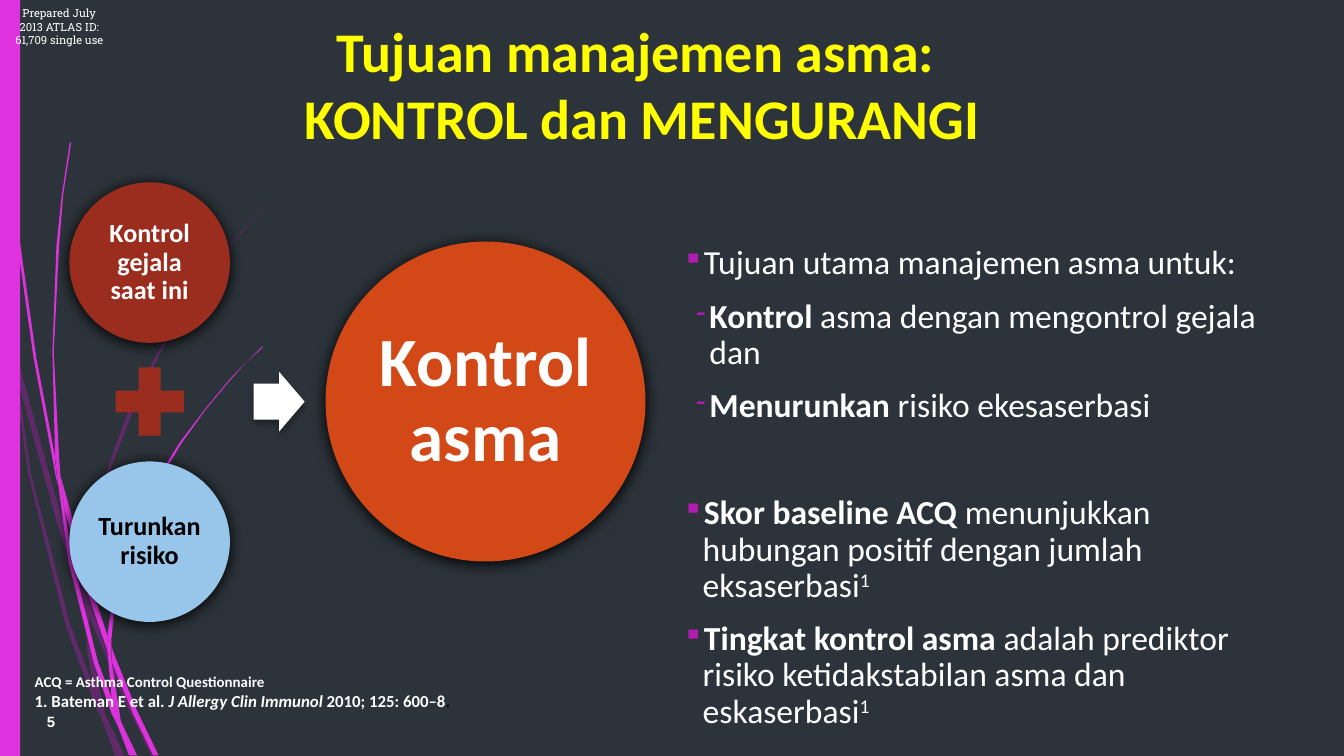
from lxml.etree import SubElement
from pptx import Presentation
from pptx.dml.color import RGBColor
from pptx.enum.shapes import MSO_SHAPE
from pptx.enum.text import MSO_ANCHOR, MSO_AUTO_SIZE, PP_ALIGN
from pptx.oxml.ns import qn
from pptx.util import Pt

COLORS = {
    "background": "2C333A", "purple": "B01CB0", "pink": "DE32DE", "red": "9B2D1F",
    "orange": "D34817", "blue": "98C6EA", "white": "FFFFFF", "black": "000000",
    "yellow": "FFFF00",
}
BODY_FONT = "Calibri"
STRAND_UNIT = Pt(0.72)

# Outlines of the decorative strands, in strand units
FAINT_STRANDS = [
    [(8, 263), (6, 241), (0, 211), (0, 224), (8, 258)],
    [(43, 391), (63, 449), (64, 440), (47, 390), (11, 259), (13, 282)],
    [(69, 455), (66, 447), (66, 458), (92, 520), (113, 563), (116, 563), (95, 519)],
    [(89, 563), (93, 563), (79, 533)],
    [(70, 512), (52, 464), (23, 352), (13, 282), (8, 263), (21, 352), (49, 466),
     (69, 520), (76, 536), (74, 530)],
    [(63, 449), (65, 485), (70, 512), (72, 519), (79, 533), (78, 530), (68, 484),
     (66, 458), (66, 456)],
    [(66, 438), (70, 392), (83, 347), (100, 303), (120, 261), (144, 222), (171, 184),
     (201, 148), (217, 131), (234, 115), (217, 131), (201, 148), (171, 183),
     (143, 221), (118, 261), (97, 302), (81, 346), (69, 391), (64, 438), (64, 440),
     (66, 447)],
    [(76, 536), (86, 563), (89, 563)],
    [(66, 456), (66, 458), (66, 447), (64, 440), (63, 449)],
    [(72, 519), (70, 512), (74, 530), (76, 536), (89, 563), (79, 533)],
]
BRIGHT_STRANDS = [
    [(5, 82), (12, 175), (25, 266), (42, 357), (43, 361), (41, 343), (41, 340),
     (27, 266), (14, 174), (6, 82), (3, 36), (3, 0), (2, 0), (3, 36)],
    [(66, 444), (80, 484), (80, 475), (80, 473), (70, 443), (45, 354), (48, 379)],
    [(85, 487), (83, 481), (83, 492), (99, 531), (114, 562), (118, 562), (102, 529)],
    [(83, 519), (73, 493), (54, 417), (48, 379), (43, 358), (51, 418), (70, 494),
     (83, 531), (88, 541), (87, 538)],
    [(45, 354), (44, 340), (40, 262), (44, 183), (47, 145), (53, 106), (52, 106),
     (46, 145), (42, 183), (39, 262), (41, 337)],
    [(100, 562), (102, 562), (91, 539)],
    [(43, 358), (48, 379), (45, 354), (41, 337), (41, 340)],
    [(83, 475), (86, 444), (94, 414), (105, 385), (119, 357), (135, 330), (153, 305),
     (173, 281), (184, 269), (196, 258), (195, 258), (184, 269), (173, 280),
     (153, 304), (134, 329), (117, 356), (103, 384), (92, 413), (84, 443), (80, 473),
     (83, 481)],
    [(88, 541), (96, 562), (98, 562)],
    [(80, 484), (83, 519), (87, 530), (91, 539), (90, 537), (83, 492), (81, 488)],
    [(80, 484), (81, 488), (83, 492), (83, 481), (80, 473), (80, 475)],
    [(87, 530), (83, 519), (87, 538), (88, 541), (98, 562), (100, 562), (91, 539)],
]

# Circles: text, left, top, diameter, fill, text color, size, inset
CIRCLES = [
    ("Kontrol gejala saat ini", 37.2, 97.7, 86, "red", "white", 14, 1.3),
    ("Turunkan risiko", 37.2, 247.2, 86, "blue", "black", 14, 1.3),
    ("Kontrol asma", 174.4, 129.4, 171.4, "orange", "white", 37, 3.4),
]

BOLD, ITALIC, RAISED = "bold", "italic", "raised"
# Goals: bullet, left margin, hanging indent, space before, runs
GOALS = [
    ("▪", 10.8, 10.8, 0, [("Tujuan utama manajemen asma untuk:", None)]),
    ("-", 14.4, 7.2, 9, [("Kontrol ", BOLD), ("asma dengan mengontrol gejala dan", None)]),
    ("-", 14.4, 7.2, 9, [("Menurunkan ", BOLD), ("risiko ekesaserbasi", None)]),
    ("▪", 10.8, 10.8, 38, [
        ("Skor baseline ACQ ", BOLD),
        ("menunjukkan hubungan positif dengan jumlah eksaserbasi", None), ("1", RAISED)]),
    ("▪", 10.8, 10.8, 9, [
        ("Tingkat kontrol asma ", BOLD),
        ("adalah prediktor risiko ketidakstabilan asma dan eskaserbasi", None),
        ("1", RAISED)]),
]
TITLE = ["Tujuan manajemen asma: ", "KONTROL dan MENGURANGI"]
ABBREVIATION = "ACQ = Asthma Control Questionnaire"
REFERENCE = [("1. Bateman E et al. ", None), ("J Allergy Clin Immunol ", ITALIC),
             ("2010; 125: 600–8", None)]
PREPARED = "Prepared July 2013 ATLAS ID: 61,709 single use"


def rgb(name):
    return RGBColor.from_string(COLORS[name])


def paint(shape, color, alpha=None):
    """Give a shape a flat fill without line or shadow."""
    shape.shadow.inherit = False
    shape.line.fill.background()
    shape.fill.solid()
    shape.fill.fore_color.rgb = rgb(color)
    if alpha:
        fill = shape._element.spPr.find(qn("a:solidFill"))
        SubElement(fill[0], qn("a:alpha"), val=str(alpha * 1000))


def add_shadow(shape, blur, distance, alpha):
    effects = shape._element.spPr.find(qn("a:effectLst"))
    shadow = SubElement(effects, qn("a:outerShdw"), blurRad=str(Pt(blur)),
                        dist=str(Pt(distance)), dir="5400000", rotWithShape="0")
    color = SubElement(shadow, qn("a:srgbClr"), val=COLORS["black"])
    SubElement(color, qn("a:alpha"), val=str(alpha * 1000))


def add_preset(kind, left, top, width, height, color):
    shape = slide.shapes.add_shape(kind, Pt(left), Pt(top), Pt(width), Pt(height))
    paint(shape, color)
    return shape


def add_strand(outline, color, alpha=None):
    builder = slide.shapes.build_freeform(*outline[0], scale=STRAND_UNIT)
    builder.add_line_segments(outline[1:], close=True)
    paint(builder.convert_to_shape(), color, alpha)


def add_text_frame(left, top, width, height, anchor=MSO_ANCHOR.TOP):
    box = slide.shapes.add_textbox(Pt(left), Pt(top), Pt(width), Pt(height))
    box.text_frame.word_wrap = True
    box.text_frame.vertical_anchor = anchor
    return box.text_frame


def set_margins(frame, inset):
    frame.margin_left = frame.margin_right = Pt(inset)
    frame.margin_top = frame.margin_bottom = Pt(inset)


def style(paragraph, size, color="white", bold=None, name=BODY_FONT, align=None):
    font = paragraph.font
    font.size, font.name, font.bold = Pt(size), name, bold
    font.color.rgb = rgb(color)
    paragraph.alignment = align


def add_runs(paragraph, runs):
    for text, emphasis in runs:
        run = paragraph.add_run()
        run.text = text
        if emphasis == BOLD:
            run.font.bold = True
        elif emphasis == ITALIC:
            run.font.italic = True
        elif emphasis == RAISED:
            run._r.get_or_add_rPr().set("baseline", "30000")


def add_bullet(paragraph, character, margin, hanging):
    properties = paragraph._p.get_or_add_pPr()
    properties.set("marL", str(Pt(margin)))
    properties.set("indent", str(-Pt(hanging)))
    color = SubElement(properties, qn("a:buClr"))
    SubElement(color, qn("a:srgbClr"), val=COLORS["purple"])
    SubElement(properties, qn("a:buSzPct"), val="85000")
    SubElement(properties, qn("a:buChar"), char=character)


def next_paragraph(frame, index):
    return frame.add_paragraph() if index else frame.paragraphs[0]


presentation = Presentation()
presentation.slide_width, presentation.slide_height = Pt(720), Pt(405)
slide = presentation.slides.add_slide(presentation.slide_layouts[6])
slide.background.fill.solid()
slide.background.fill.fore_color.rgb = rgb("background")

for outline in FAINT_STRANDS:
    add_strand(outline, "purple", 40)
for outline in BRIGHT_STRANDS:
    add_strand(outline, "pink")
add_preset(MSO_SHAPE.RECTANGLE, 0, 0, 10.8, 405, "pink")

frame = add_text_frame(25.2, 381.6, 31, 13)
set_margins(frame, 0)
frame.text = "5"
style(frame.paragraphs[0], 8, bold=True, name="Arial")

frame = add_text_frame(358.6, 128.2, 338.4, 223.9)
for index, (bullet, margin, hanging, space, runs) in enumerate(GOALS):
    paragraph = next_paragraph(frame, index)
    add_bullet(paragraph, bullet, margin, hanging)
    paragraph.line_spacing = 0.9
    paragraph.space_before = Pt(space)
    style(paragraph, 18)
    add_runs(paragraph, runs)

for text, left, top, diameter, fill, color, size, inset in CIRCLES:
    circle = add_preset(MSO_SHAPE.OVAL, left, top, diameter, diameter, fill)
    add_shadow(circle, 8.5, 1, 100)
    frame = circle.text_frame
    frame.word_wrap = True
    frame.vertical_anchor = MSO_ANCHOR.MIDDLE
    set_margins(frame, inset)
    frame.text = text
    frame.paragraphs[0].line_spacing = 0.9
    style(frame.paragraphs[0], size, color, True, align=PP_ALIGN.CENTER)

add_preset(MSO_SHAPE.MATH_PLUS, 55.3, 190.2, 49.8, 49.8, "red")
arrow = add_preset(MSO_SHAPE.RIGHT_ARROW, 135.9, 199.2, 27.3, 32, "white")
arrow.adjustments[0], arrow.adjustments[1] = 0.6, 0.5
add_shadow(arrow, 3.5, 2.2, 32)

frame = add_text_frame(11.5, 356.4, 240.5, 28, MSO_ANCHOR.BOTTOM)
frame.word_wrap = False
frame.auto_size = MSO_AUTO_SIZE.SHAPE_TO_FIT_TEXT
frame.text = ABBREVIATION
style(frame.paragraphs[0], 8, bold=True)
paragraph = frame.add_paragraph()
style(paragraph, 9, bold=True)
add_runs(paragraph, REFERENCE)
full_stop = paragraph.add_run()
full_stop.text = "."
full_stop.font.color.rgb = rgb("black")

frame = add_text_frame(0, 0, 63.4, 28.8)
frame.text = PREPARED
style(frame.paragraphs[0], 6, name="Roboto Slab", align=PP_ALIGN.CENTER)

frame = add_text_frame(73.4, 10.8, 541.4, 67.7, MSO_ANCHOR.MIDDLE)
for index, line in enumerate(TITLE):
    paragraph = next_paragraph(frame, index)
    paragraph.text = line
    style(paragraph, 30, "yellow", True, align=PP_ALIGN.CENTER)

presentation.save("out.pptx")
